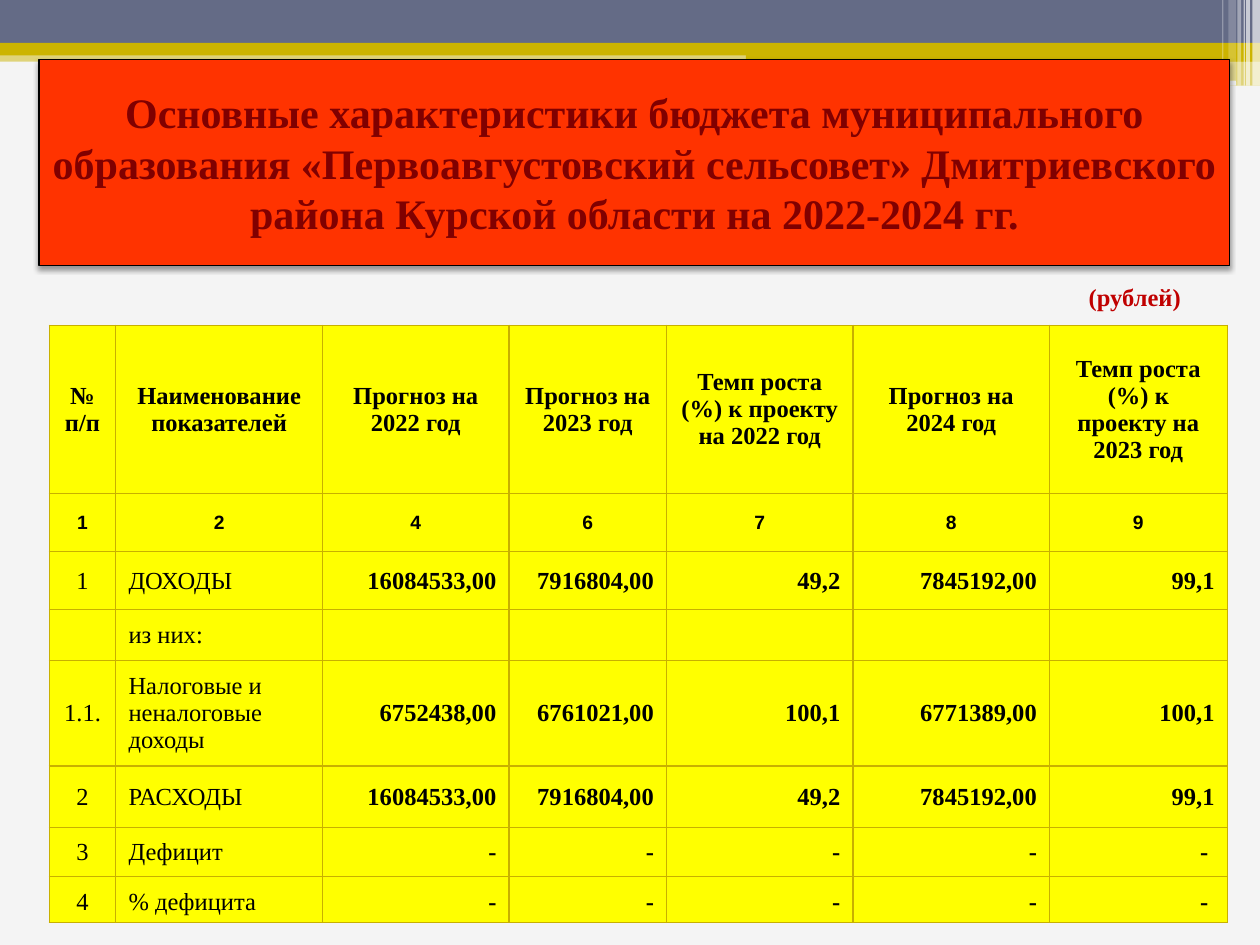
from dataclasses import dataclass

from lxml.etree import SubElement
from pptx import Presentation
from pptx.dml.color import RGBColor
from pptx.enum.shapes import MSO_SHAPE
from pptx.enum.text import MSO_ANCHOR, MSO_AUTO_SIZE, PP_ALIGN
from pptx.oxml import parse_xml
from pptx.oxml.ns import nsdecls, qn
from pptx.util import Inches, Pt


@dataclass(frozen=True)
class Theme:
    """Colours, fonts and type sizes of the slide."""
    paper: str = "F4F4F4"
    slate: str = "646B86"
    gold: str = "CCB400"
    white: str = "FFFFFF"
    black: str = "000000"
    banner: str = "FF3300"
    maroon: str = "800000"
    unit: str = "C00000"
    cell: str = "FFFF00"
    border: str = "C8B000"
    serif: str = "Times New Roman"
    sans: str = "Arial"
    title_size: float = 24
    text_size: float = 14
    number_size: float = 11


THEME = Theme()
TITLE = ("Основные характеристики бюджета муниципального образования "
         "«Первоавгустовский сельсовет» Дмитриевского района Курской области на 2022-2024 гг.")
BANDS = [
    (0, 0.4, 10, 0.09, THEME.gold, 50),
    (0, 0, 10, 0.34, THEME.slate, 100),
    (0, 0.34, 10, 0.1, THEME.gold, 100),
    (5.92, 0.39, 4.08, 0.1, THEME.gold, 100),
    (5.92, 0.48, 4.08, 0.2, THEME.gold, 50),
]
STRIPES = [(9.94, 0.06, 0.68, 65), (9.89, 0.03, 0.68, 65), (9.87, 0.01, 0.68, 60),
           (9.82, 0.03, 0.68, 40), (9.75, 0.06, 0.64, 20), (9.7, 0.01, 0.64, 30)]
COLUMN_WIDTHS = [0.53, 1.64, 1.48, 1.25, 1.48, 1.56, 1.41]
ROW_HEIGHTS = [1.34, 0.46, 0.46, 0.39, 0.84, 0.49, 0.39, 0.36]
ROWS = [
    ["№ п/п", "Наименование показателей", "Прогноз на 2022 год", "Прогноз на 2023 год",
     "Темп роста (%) к проекту на 2022 год", "Прогноз на 2024 год",
     "Темп роста (%) к проекту на 2023 год"],
    ["1", "2", "4", "6", "7", "8", "9"],
    ["1", "ДОХОДЫ", "16084533,00", "7916804,00", "49,2", "7845192,00", "99,1"],
    ["", "из них:", "", "", "", "", ""],
    ["1.1.", "Налоговые и неналоговые доходы", "6752438,00", "6761021,00", "100,1",
     "6771389,00", "100,1"],
    ["2", "РАСХОДЫ", "16084533,00", "7916804,00", "49,2", "7845192,00", "99,1"],
    ["3", "Дефицит", "-", "-", "-", "-", "-"],
    ["4", "% дефицита", "-", "-", "-", "-", "-"],
]


def write_text(frame, text, size=THEME.text_size, font=THEME.serif, color=THEME.black,
               bold=True, align=PP_ALIGN.LEFT):
    """Write one formatted paragraph into a text frame."""
    para = frame.paragraphs[0]
    para.alignment = align
    span = para.add_run()
    span.text = text
    span.font.size = Pt(size)
    span.font.name = font
    span.font.bold = bold
    span.font.color.rgb = RGBColor.from_string(color)


def paint(fill, color):
    """Give a fill one solid colour."""
    fill.solid()
    fill.fore_color.rgb = RGBColor.from_string(color)


def add_band(page, left, top, width, height, color, opacity=100, kind=MSO_SHAPE.RECTANGLE):
    """Add a plain decorative band with optional transparency."""
    band = page.shapes.add_shape(kind, Inches(left), Inches(top), Inches(width), Inches(height))
    band.shadow.inherit = False
    paint(band.fill, color)
    band.line.fill.background()
    if opacity < 100:
        tint = band.element.spPr.find(".//" + qn("a:srgbClr"))
        SubElement(tint, qn("a:alpha"), val=str(opacity * 1000))


def add_header_bands(page):
    """Draw the coloured bands and the light stripes along the top."""
    for band in BANDS:
        add_band(page, *band)
    add_band(page, 8.06, 0.64, 1.75, 0.04, THEME.paper, kind=MSO_SHAPE.ROUNDED_RECTANGLE)
    for left, width, height, opacity in STRIPES:
        add_band(page, left, 0, width, height, THEME.white, opacity)


def place_title(page):
    """Format the title placeholder as a shadowed banner above the bands."""
    title = page.shapes.title
    title.left, title.top = Inches(0.31), Inches(0.47)
    title.width, title.height = Inches(9.45), Inches(1.64)
    paint(title.fill, THEME.banner)
    paint(title.line.fill, THEME.black)
    title.line.width = Pt(0.75)
    title.element.spPr.append(parse_xml(
        f'<a:effectLst {nsdecls("a")}><a:outerShdw blurRad="{Pt(3.1)}" dist="{Pt(1.6)}" '
        f'dir="5400000" rotWithShape="0"><a:srgbClr val="{THEME.black}">'
        '<a:alpha val="38000"/></a:srgbClr></a:outerShdw></a:effectLst>'))
    frame = title.text_frame
    frame.word_wrap = True
    frame.auto_size = MSO_AUTO_SIZE.NONE
    frame.vertical_anchor = MSO_ANCHOR.MIDDLE
    frame.margin_left = frame.margin_right = Inches(0.08)
    write_text(frame, TITLE, size=THEME.title_size, color=THEME.maroon, align=PP_ALIGN.CENTER)
    title.element.getparent().append(title.element)


def add_unit_label(page):
    """Add the currency note above the table."""
    box = page.shapes.add_textbox(Inches(8.3), Inches(2.19), Inches(1.42), Inches(0.34))
    box.text_frame.word_wrap = True
    box.text_frame.margin_left = Inches(0.34)
    write_text(box.text_frame, "(рублей)", color=THEME.unit)


def set_borders(cell):
    """Draw a thin line on each side of a cell."""
    properties = cell._tc.get_or_add_tcPr()
    for position, side in enumerate(("lnL", "lnR", "lnT", "lnB")):
        properties.insert(position, parse_xml(
            f'<a:{side} {nsdecls("a")} w="{Pt(0.75)}"><a:solidFill>'
            f'<a:srgbClr val="{THEME.border}"/></a:solidFill></a:{side}>'))


def cell_format(row, column):
    """Return the text format for a position in the table."""
    if row == 0:
        return dict(align=PP_ALIGN.CENTER)
    if row == 1:
        return dict(align=PP_ALIGN.CENTER, font=THEME.sans, size=THEME.number_size)
    if column == 0:
        return dict(align=PP_ALIGN.CENTER, bold=False)
    if column == 1:
        return dict(bold=False)
    return dict(align=PP_ALIGN.RIGHT)


def add_budget_table(page):
    """Add the table of budget figures."""
    table = page.shapes.add_table(len(ROWS), len(COLUMN_WIDTHS), Inches(0.39), Inches(2.58),
                                  Inches(sum(COLUMN_WIDTHS)), Inches(sum(ROW_HEIGHTS))).table
    table.first_row = table.horz_banding = False
    for column, width in zip(table.columns, COLUMN_WIDTHS):
        column.width = Inches(width)
    for row, height in zip(table.rows, ROW_HEIGHTS):
        row.height = Inches(height)
    last_row, last_column = len(ROWS) - 1, len(COLUMN_WIDTHS) - 1
    for row, texts in enumerate(ROWS):
        for column, text in enumerate(texts):
            cell = table.cell(row, column)
            paint(cell.fill, THEME.cell)
            set_borders(cell)
            cell.vertical_anchor = MSO_ANCHOR.BOTTOM if row == last_row else MSO_ANCHOR.MIDDLE
            if text == "-" and column == last_column:
                cell.margin_right = Inches(0.15)
            write_text(cell.text_frame, text, **cell_format(row, column))


def main():
    """Build the budget slide and save it."""
    deck = Presentation()
    deck.slide_width, deck.slide_height = Inches(10), Inches(7.5)
    page = deck.slides.add_slide(deck.slide_layouts[5])
    paint(page.background.fill, THEME.paper)
    add_header_bands(page)
    place_title(page)
    add_unit_label(page)
    add_budget_table(page)
    deck.save("out.pptx")


if __name__ == "__main__":
    main()
